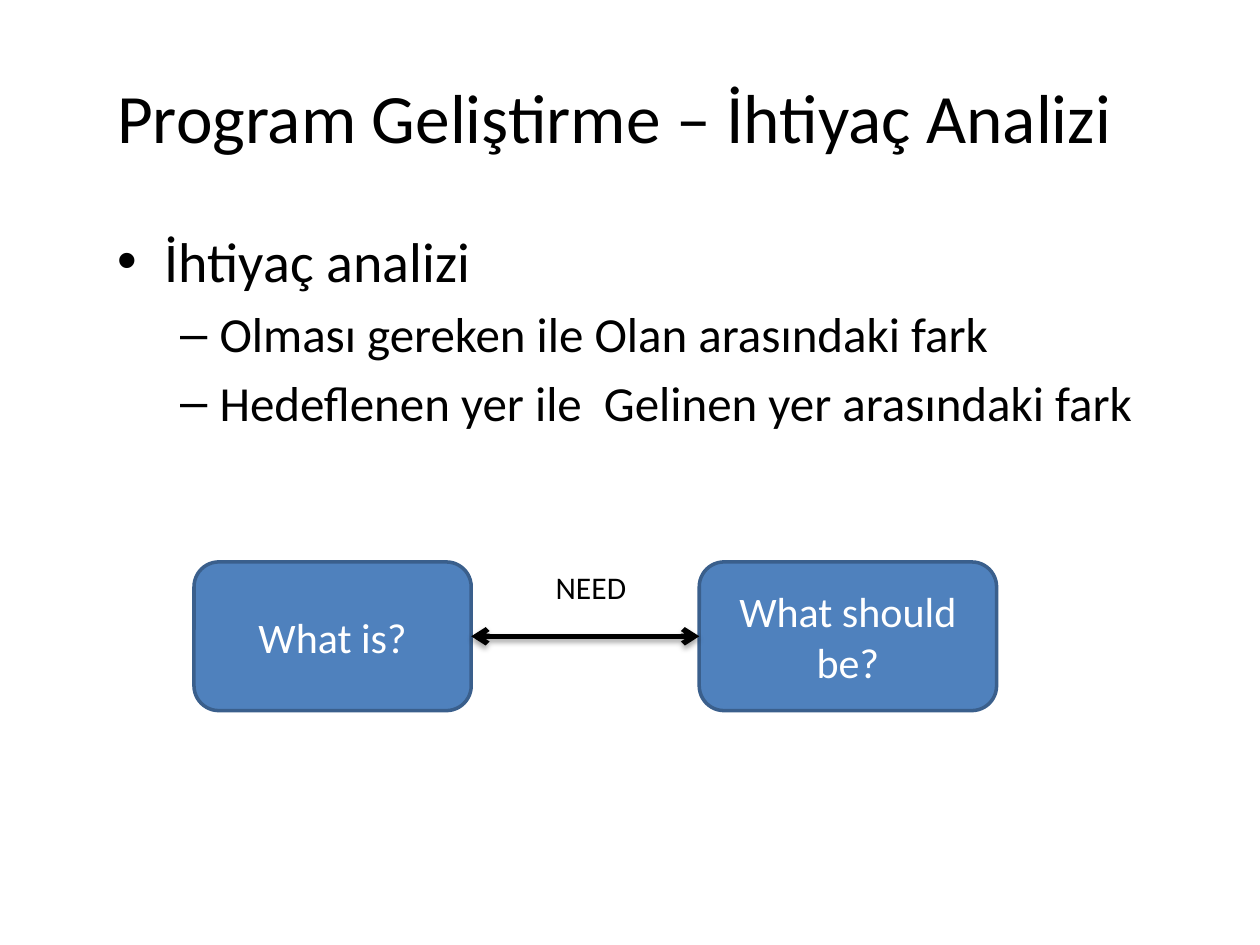
"""Builds the needs analysis slide with its list and gap diagram."""
from lxml import etree
from pptx import Presentation
from pptx import util as u
from pptx.dml.color import RGBColor
from pptx.enum import shapes, text
from pptx.oxml import parse_xml
from pptx.oxml.ns import nsdecls, qn

BLACK = RGBColor(0x00, 0x00, 0x00)
WHITE = RGBColor(0xFF, 0xFF, 0xFF)
BLUE = RGBColor(0x4F, 0x81, 0xBD)
DARK_BLUE = RGBColor(0x3A, 0x5F, 0x8C)
COLUMNS, ROWS = 100, 75
SHADOW = (
    f'<a:effectLst {nsdecls("a")}>'
    '<a:outerShdw blurRad="39370" dist="22860" dir="5400000" rotWithShape="0">'
    '<a:srgbClr val="000000"><a:alpha val="35000"/></a:srgbClr>'
    '</a:outerShdw></a:effectLst>'
)


class SlideBuilder:
    """Holds the style and the current slide."""

    font = "Calibri"

    def __init__(self, deck):
        """Adds a title and content slide to the deck."""
        self.cell_width = deck.slide_width / COLUMNS
        self.cell_height = deck.slide_height / ROWS
        self.page = deck.slides.add_slide(deck.slide_layouts[1])

    def area(self, column, row, columns, rows):
        """Turns grid cells into left, top, width and height."""
        return (
            u.Emu(round(column * self.cell_width)),
            u.Emu(round(row * self.cell_height)),
            u.Emu(round(columns * self.cell_width)),
            u.Emu(round(rows * self.cell_height)),
        )

    def format(self, para, size, color, align):
        """Formats a paragraph and its runs."""
        para.alignment = align
        for span in para.runs:
            span.font.name = self.font
            span.font.size = u.Pt(size)
            span.font.color.rgb = color

    def fill_placeholder(self, box, cells, items):
        """Moves a placeholder and fills it with text, level and size."""
        box.left, box.top, box.width, box.height = self.area(*cells)
        frame = box.text_frame
        frame.auto_size = text.MSO_AUTO_SIZE.NONE
        for index, (words, level, size) in enumerate(items):
            para = frame.add_paragraph() if index else frame.paragraphs[0]
            para.text = words
            para.level = level
            self.format(para, size, BLACK, text.PP_ALIGN.LEFT)

    def title(self, words, cells):
        """Sets the slide title."""
        self.fill_placeholder(self.page.shapes.title, cells, [(words, 0, 39.6)])

    def bullets(self, items, cells):
        """Sets the bulleted list."""
        self.fill_placeholder(self.page.placeholders[1], cells, items)

    def state(self, words, cells):
        """Adds a rounded box with centred text."""
        box = self.page.shapes.add_shape(
            shapes.MSO_SHAPE.ROUNDED_RECTANGLE, *self.area(*cells))
        box.shadow.inherit = False
        box.fill.solid()
        box.fill.fore_color.rgb = BLUE
        box.line.color.rgb = DARK_BLUE
        box.line.width = u.Pt(2)
        frame = box.text_frame
        frame.text = words
        frame.vertical_anchor = text.MSO_ANCHOR.MIDDLE
        self.format(frame.paragraphs[0], 24, WHITE, text.PP_ALIGN.CENTER)
        return box

    def double_arrow(self, start, end):
        """Joins the facing sides of two boxes with a two-headed arrow."""
        arrow = self.page.shapes.add_connector(
            shapes.MSO_CONNECTOR.STRAIGHT, 0, 0, 0, 0)
        arrow.begin_connect(start, 3)
        arrow.end_connect(end, 1)
        arrow.line.color.rgb = BLACK
        arrow.line.width = u.Pt(3)
        line = arrow.line._get_or_add_ln()
        for name in ("a:headEnd", "a:tailEnd"):
            etree.SubElement(line, qn(name), type="arrow")
        arrow._element.spPr.append(parse_xml(SHADOW))

    def label(self, words, cells):
        """Adds a centred text label."""
        box = self.page.shapes.add_textbox(*self.area(*cells))
        frame = box.text_frame
        frame.word_wrap = True
        frame.auto_size = text.MSO_AUTO_SIZE.SHAPE_TO_FIT_TEXT
        frame.text = words
        self.format(frame.paragraphs[0], 18, BLACK, text.PP_ALIGN.CENTER)


def main():
    """Builds and saves the deck."""
    deck = Presentation()
    deck.slide_width, deck.slide_height = u.Inches(10), u.Inches(7.5)
    slide = SlideBuilder(deck)
    slide.title("Program Geliştirme – İhtiyaç Analizi", (8.3, 2.9, 88.3, 12.5))
    slide.bullets([
        ("İhtiyaç analizi", 0, 32),
        ("Olması gereken ile Olan arasındaki fark", 1, 28),
        ("Hedeflenen yer ile  Gelinen yer arasındaki fark", 1, 28),
    ], (8.3, 17.5, 88.3, 47))
    top, height = 44.6, 11.8
    current = slide.state("What is?", (15.4, top, 22, height))
    target = slide.state("What should be?", (55.5, top, 23.6, height))
    slide.double_arrow(current, target)
    slide.label("NEED", (39.8, top, 14.2, 4))
    deck.save("out.pptx")


if __name__ == "__main__":
    main()
